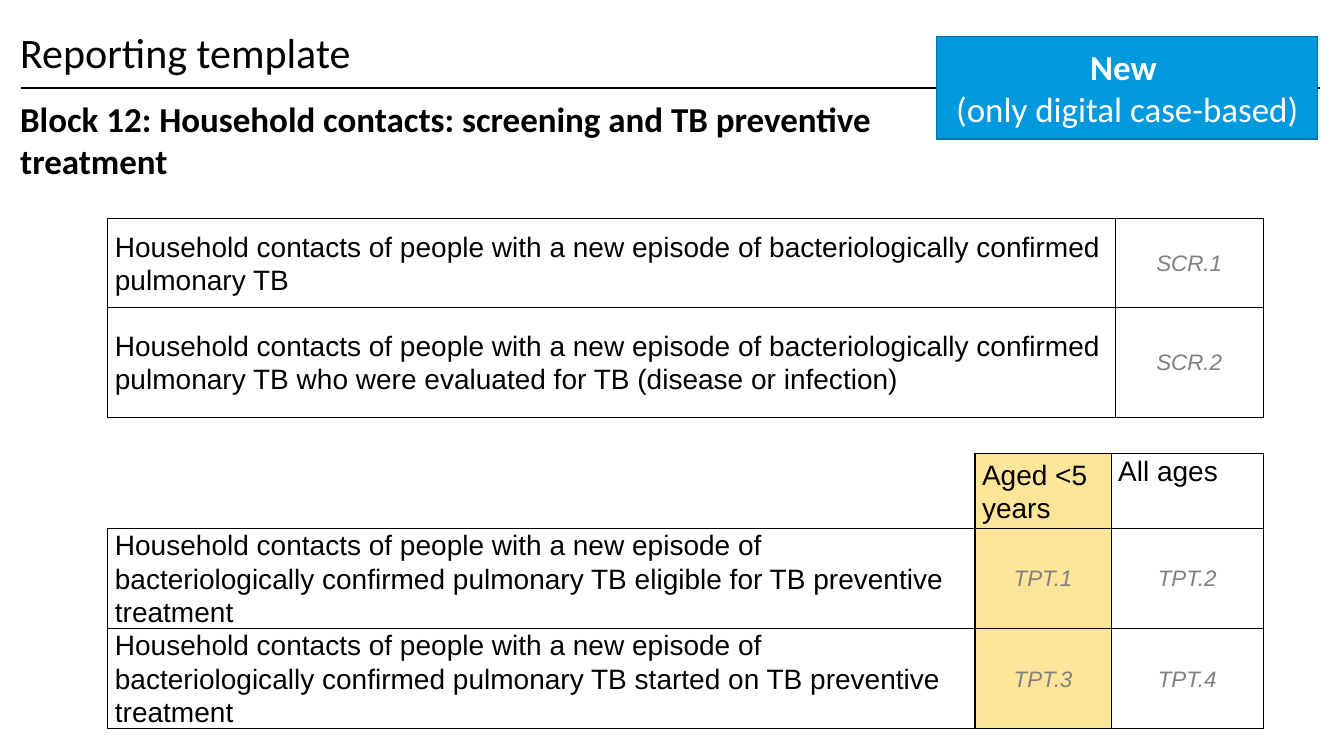
import pptx
import pptx.util
import pptx.dml.color
import pptx.enum.shapes
import pptx.enum.text
import pptx.oxml
import pptx.oxml.ns
import lxml.etree

Inches = pptx.util.Inches
Pt = pptx.util.Pt
ALIGN = pptx.enum.text.PP_ALIGN
ANCHOR = pptx.enum.text.MSO_ANCHOR
qn = pptx.oxml.ns.qn


def color(value):
    return pptx.dml.color.RGBColor.from_string(value)


class SlideBuilder:
    black, white, grey = "000000", "FFFFFF", "808080"
    blue, dark_blue, yellow = "0099DD", "0071A3", "FFE599"
    heading_font, table_font = "Calibri", "Arial"

    def __init__(self, slide):
        self.slide = slide

    def format_font(self, paragraph, name, size, value, bold=False, italic=False):
        font = paragraph.font
        font.name, font.size = name, Pt(size)
        font.bold, font.italic = bold, italic
        font.color.rgb = color(value)

    def place(self, shape, left, top, width, height):
        shape.left, shape.top = Inches(left), Inches(top)
        shape.width, shape.height = Inches(width), Inches(height)

    def title(self, text, *box):
        shape = self.slide.shapes.title
        self.place(shape, *box)
        frame = shape.text_frame
        frame.text = text
        frame.auto_size = pptx.enum.text.MSO_AUTO_SIZE.NONE
        frame.vertical_anchor = ANCHOR.MIDDLE
        paragraph = frame.paragraphs[0]
        paragraph.alignment = ALIGN.LEFT
        paragraph.line_spacing = 0.9
        self.format_font(paragraph, self.heading_font, 30, self.black)

    def body(self, text, *box):
        shape = self.slide.placeholders[1]
        self.place(shape, *box)
        frame = shape.text_frame
        frame.text = text
        frame.auto_size = pptx.enum.text.MSO_AUTO_SIZE.NONE
        frame.margin_left = frame.margin_right = 0
        frame.margin_top = frame.margin_bottom = 0
        paragraph = frame.paragraphs[0]
        paragraph.space_before = Pt(10)
        self.format_font(paragraph, self.heading_font, 25, self.black, bold=True)
        properties = paragraph._p.get_or_add_pPr()
        properties.set("marL", "0")
        properties.set("indent", "0")
        bullet = lxml.etree.Element(qn("a:buNone"))
        properties.find(qn("a:spcBef")).addnext(bullet)

    def rule(self, left, right, top):
        line = self.slide.shapes.add_connector(
            pptx.enum.shapes.MSO_CONNECTOR.STRAIGHT,
            Inches(left), Inches(top), Inches(right), Inches(top))
        line.line.color.rgb = color(self.black)
        line.line.width = Pt(1.5)
        lxml.etree.SubElement(line._element.spPr, qn("a:effectLst"))

    def badge(self, lines, left, top, width, height):
        shape = self.slide.shapes.add_shape(
            pptx.enum.shapes.MSO_SHAPE.RECTANGLE,
            Inches(left), Inches(top), Inches(width), Inches(height))
        shape.shadow.inherit = False
        shape.fill.solid()
        shape.fill.fore_color.rgb = color(self.blue)
        shape.line.color.rgb = color(self.dark_blue)
        shape.line.width = Pt(1)
        frame = shape.text_frame
        frame.text = "\n".join(lines)
        frame.vertical_anchor = ANCHOR.MIDDLE
        for index, paragraph in enumerate(frame.paragraphs):
            paragraph.alignment = ALIGN.CENTER
            self.format_font(paragraph, self.heading_font, 25, self.white, bold=index == 0)

    def borders(self, cell, visible):
        properties = cell._tc.get_or_add_tcPr()
        for index, side in enumerate("LRTB"):
            border = lxml.etree.Element(qn(f"a:ln{side}"), w=str(Pt(1)))
            if side in visible:
                fill = lxml.etree.SubElement(border, qn("a:solidFill"))
                lxml.etree.SubElement(fill, qn("a:srgbClr"), val=self.black)
            else:
                lxml.etree.SubElement(border, qn("a:noFill"))
            properties.insert(index, border)

    def cell(self, cell, text, is_code, anchor, fill):
        cell.margin_left = cell.margin_right = Inches(0.07)
        cell.margin_top = cell.margin_bottom = 0
        cell.vertical_anchor = anchor
        if fill:
            cell.fill.solid()
            cell.fill.fore_color.rgb = color(fill)
        else:
            cell.fill.background()
        self.borders(cell, "LRTB" if text else "RB")
        if not text:
            return
        cell.text = text
        paragraph = cell.text_frame.paragraphs[0]
        paragraph.line_spacing = 1.07
        if is_code:
            paragraph.alignment = ALIGN.CENTER
            paragraph.space_after = Pt(6)
            self.format_font(paragraph, self.table_font, 16, self.grey, italic=True)
        else:
            paragraph.space_before, paragraph.space_after = Pt(4.5), Pt(2.7)
            self.format_font(paragraph, self.table_font, 20, self.black)

    def table(self, rows, left, top, widths, heights, header_rows=0,
              top_cells=(), filled_column=None):
        table = self.slide.shapes.add_table(
            len(rows), len(widths), Inches(left), Inches(top),
            Inches(sum(widths)), Inches(sum(heights))).table
        table.first_row = table.horz_banding = False
        for column, width in zip(table.columns, widths):
            column.width = Inches(width)
        for row, height in zip(table.rows, heights):
            row.height = Inches(height)
        for r, texts in enumerate(rows):
            for c, text in enumerate(texts):
                self.cell(table.cell(r, c), text,
                          is_code=r >= header_rows and c > 0,
                          anchor=ANCHOR.TOP if (r, c) in top_cells else ANCHOR.MIDDLE,
                          fill=self.yellow if c == filled_column else None)


def main():
    presentation = pptx.Presentation()
    presentation.slide_width = Inches(13.33)
    presentation.slide_height = Inches(7.5)
    builder = SlideBuilder(presentation.slides.add_slide(presentation.slide_layouts[1]))

    # Headings
    builder.rule(0.21, 13.09, 0.87)
    builder.body("Block 12: Household contacts: screening and TB preventive treatment",
                 0.2, 0.97, 9.1, 5.98)
    builder.title("Reporting template", 0.1, 0.12, 13.1, 0.85)

    # Screening table
    contacts = ("Household contacts of people with a new episode of "
                "bacteriologically confirmed pulmonary TB")
    builder.table(
        [[contacts, "SCR.1"],
         [contacts + " who were evaluated for TB (disease or infection)", "SCR.2"]],
        1.07, 2.17, [9.99, 1.47], [0.88, 1.09])

    # Preventive treatment table
    builder.table(
        [["", "Aged <5 years", "All ages"],
         [contacts + " eligible for TB preventive treatment", "TPT.1", "TPT.2"],
         [contacts + " started on TB preventive treatment", "TPT.3", "TPT.4"]],
        1.07, 4.5, [8.6, 1.35, 1.51], [0.74, 0.83, 0.74], header_rows=1,
        top_cells={(0, 2), (1, 0), (2, 0)}, filled_column=1)

    # Badge
    builder.badge(["New ", "(only digital case-based)"], 9.29, 0.36, 3.78, 1.02)

    presentation.save("out.pptx")


if __name__ == "__main__":
    main()
